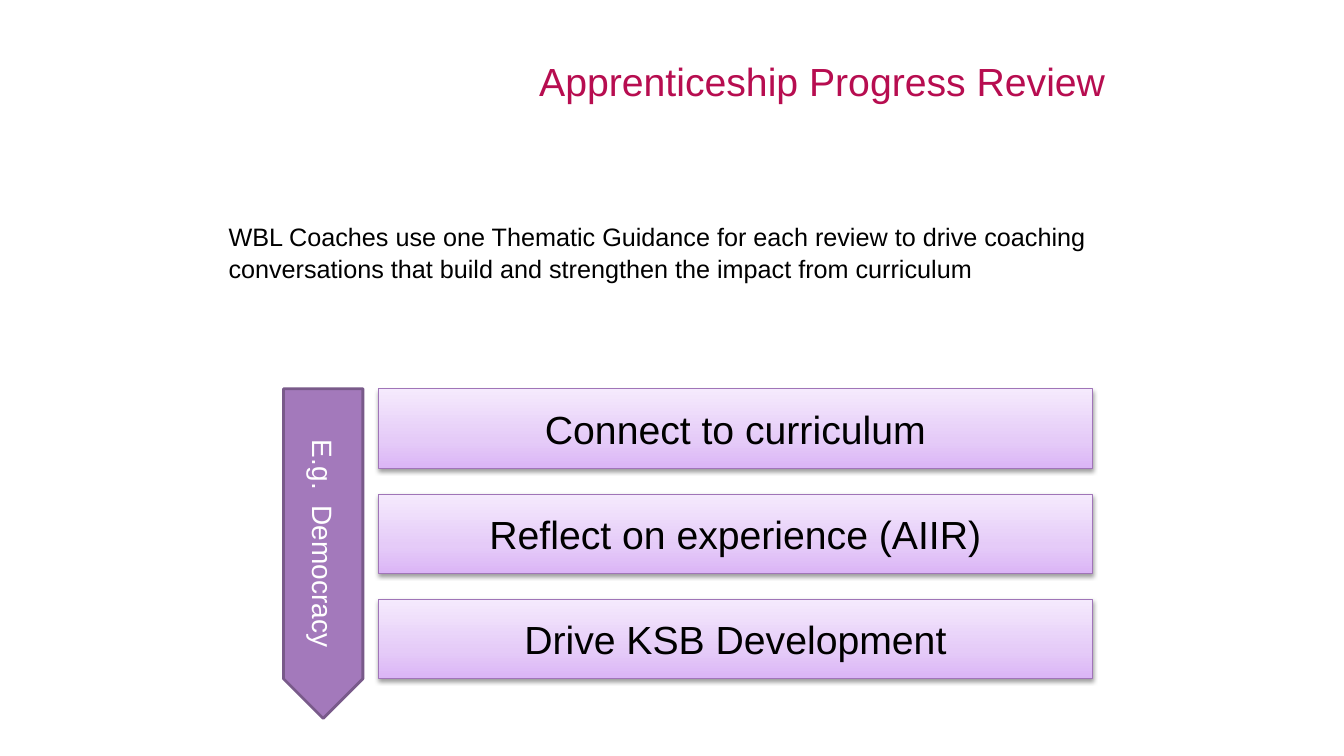
import copy
import pptx
import pptx.util
import pptx.oxml
import pptx.oxml.ns
import pptx.dml.color
import pptx.enum.text
import pptx.enum.shapes

Cm = pptx.util.Cm
Pt = pptx.util.Pt
qn = pptx.oxml.ns.qn
Kind = pptx.enum.shapes.MSO_SHAPE
Align = pptx.enum.text.PP_ALIGN
Anchor = pptx.enum.text.MSO_ANCHOR

TITLE = "Apprenticeship Progress Review"
INTRO = ("WBL Coaches use one Thematic Guidance for each review to drive coaching "
         "conversations that build and strengthen the impact from curriculum")
STEPS = ["Connect to curriculum", "Reflect on experience (AIIR)", "Drive KSB Development"]
THEME = "E.g.  Democracy"
HUES = {"title": "B70D50", "text": "000000", "light": "FFFFFF",
        "edge": "A075B8", "arrow": "A379BB", "rim": "795A8A"}
FADE = [(0, "DBB5F6"), (0.35, "E5CBF8"), (1, "F5EAFD")]
LEFT, TOP, WIDE, HIGH, PITCH = 9.53, 9.8, 18, 2, 2.65
SHADE = (
    '<a:effectLst xmlns:a="http://schemas.openxmlformats.org/drawingml/2006/main">'
    '<a:outerShdw blurRad="40000" dist="20000" dir="5400000" rotWithShape="0">'
    '<a:srgbClr val="000000"><a:alpha val="38000"/></a:srgbClr>'
    '</a:outerShdw></a:effectLst>')


def tint(code):
    return pptx.dml.color.RGBColor.from_string(code)


def write(shape, text, size=28, hue="text", align=Align.CENTER, anchor=Anchor.MIDDLE, lead=1):
    frame = shape.text_frame
    frame.word_wrap = True
    frame.vertical_anchor = anchor
    para = frame.paragraphs[0]
    para.alignment = align
    para.line_spacing = lead
    run = para.add_run()
    run.text = text
    run.font.name = "Arial"
    run.font.size = Pt(size)
    run.font.color.rgb = tint(HUES[hue])


def block(kind, box, edge, width):
    shape = slide.shapes.add_shape(kind, *map(Cm, box))
    shape.shadow.inherit = False
    shape.line.color.rgb = tint(HUES[edge])
    shape.line.width = Pt(width)
    return shape


def fade(shape):
    shape.fill.gradient()
    shape.fill.gradient_angle = 90
    props = shape._element.spPr
    stops = props.find(".//" + qn("a:gsLst"))
    stops.insert(1, copy.deepcopy(stops[0]))
    for stop, (place, code) in zip(shape.fill.gradient_stops, FADE):
        stop.position = place
        stop.color.rgb = tint(code)
    props.replace(props.find(qn("a:effectLst")), pptx.oxml.parse_xml(SHADE))


deck = pptx.Presentation()
deck.slide_width, deck.slide_height = Cm(33.87), Cm(19.05)
slide = deck.slides.add_slide(deck.slide_layouts[6])

head = slide.shapes.add_textbox(Cm(13.34), Cm(0.46), Cm(18.8), Cm(3.18))
write(head, TITLE, hue="title", align=Align.LEFT)
intro = slide.shapes.add_textbox(Cm(5.51), Cm(5.4), Cm(23.42), Cm(2.2))
write(intro, INTRO, size=18, align=Align.LEFT, anchor=Anchor.TOP, lead=1.07)

for row, step in enumerate(STEPS):
    bar = block(Kind.RECTANGLE, (LEFT, TOP + row * PITCH, WIDE, HIGH), "edge", 0.75)
    fade(bar)
    write(bar, step)

arrow = block(Kind.PENTAGON, (3.99, 12.95, 8.31, HIGH), "rim", 2)
arrow.rotation = 90
arrow.fill.solid()
arrow.fill.fore_color.rgb = tint(HUES["arrow"])
write(arrow, THEME, size=20, hue="light")

deck.save("out.pptx")
